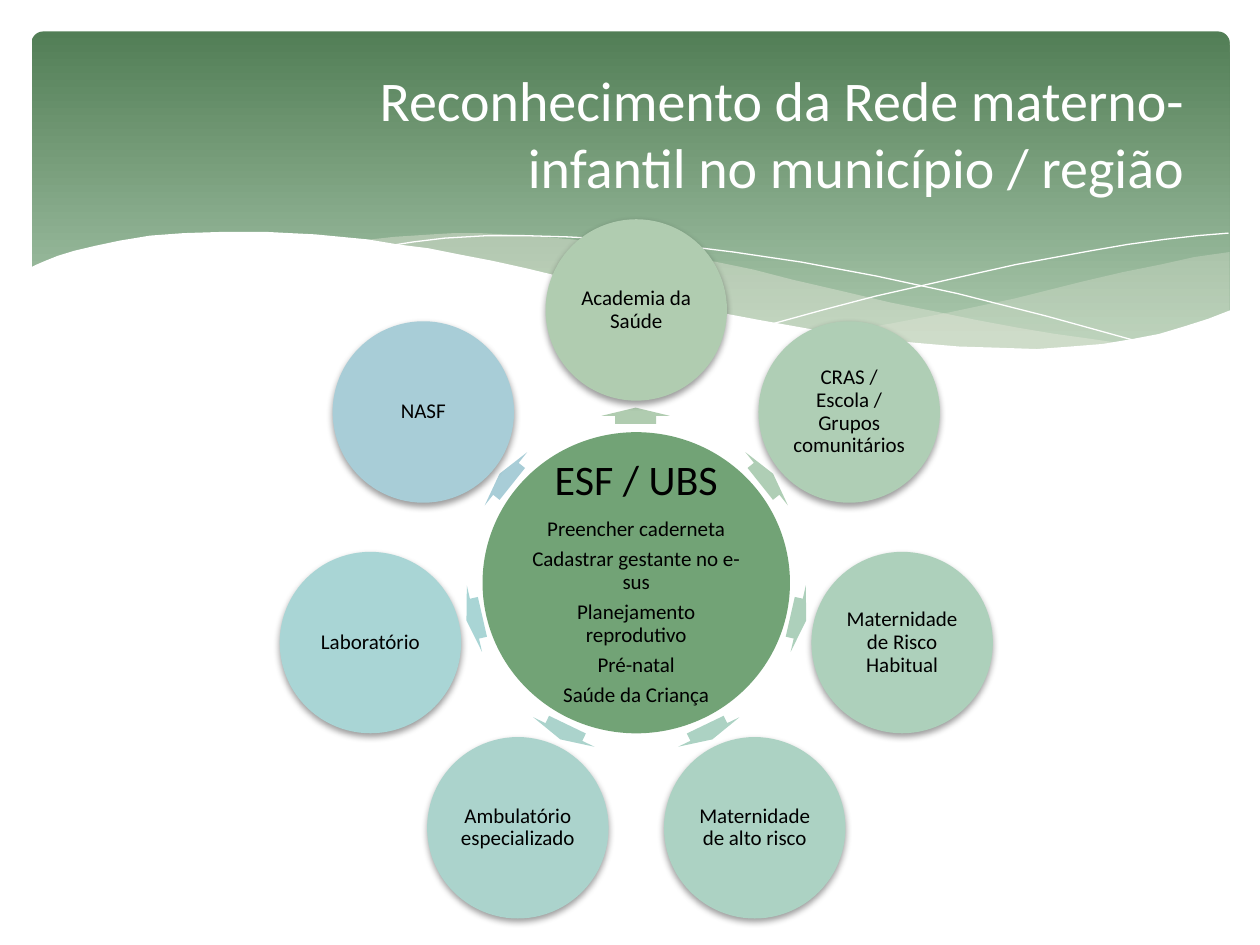
from math import cos, radians, sin

from lxml.etree import SubElement
from pptx import Presentation
from pptx.dml.color import RGBColor
from pptx.enum.shapes import MSO_SHAPE
from pptx.enum.text import MSO_ANCHOR, PP_ALIGN
from pptx.oxml.ns import qn
from pptx.util import Pt

PX = 9144
rgb = RGBColor.from_string


def paint(sp, color, opacity=100):
    sp.shadow.inherit = False
    sp.line.fill.background()
    sp.fill.solid()
    sp.fill.fore_color.rgb = rgb(color)
    if opacity < 100:
        clr = sp._element.spPr.find(qn("a:solidFill"))[0]
        SubElement(clr, qn("a:alpha"), val=str(opacity * 1000))


def write(sp, lines, sizes, inset):
    tf = sp.text_frame
    tf.word_wrap = True
    tf.vertical_anchor = MSO_ANCHOR.MIDDLE
    tf.margin_left = tf.margin_right = tf.margin_top = tf.margin_bottom = inset * PX
    tf.text = "\n".join(lines)
    for p, size in zip(tf.paragraphs, sizes):
        p.alignment = PP_ALIGN.CENTER
        p.line_spacing = 0.9
        p.space_after = Pt(round(size * 0.35, 1))
        for r in p.runs:
            r.font.name = "Calibri"
            r.font.size = Pt(size)
            r.font.color.rgb = rgb("000000")


prs = Presentation()
prs.slide_width, prs.slide_height = 1000 * PX, 750 * PX
s = prs.slides.add_slide(prs.slide_layouts[6])

banner = s.shapes.add_shape(MSO_SHAPE.ROUNDED_RECTANGLE, 25 * PX, 25 * PX, 951 * PX, 270 * PX)
banner.adjustments[0] = 0.034
banner.shadow.inherit = False
banner.line.fill.background()
banner.fill.gradient()
banner.fill.gradient_angle = 270
for stop, color, position in zip(banner.fill.gradient_stops, ("527E56", "AAC8AD"), (0, 0.9)):
    stop.color.rgb = rgb(color)
    stop.position = position

right_wave = [
    (976, 200), (948, 204), (921, 210), (891, 216), (861, 223), (805, 237), (753, 248),
    (706, 257), (661, 265), (691, 269), (719, 272), (745, 275), (769, 277), (792, 277),
    (814, 278), (844, 277), (872, 274), (897, 270), (921, 265), (942, 259), (963, 252),
    (976, 247),
]
middle_wave = [
    (893, 273), (866, 269), (837, 265), (807, 260), (775, 254), (741, 247), (706, 240),
    (668, 231), (629, 222), (598, 214), (569, 208), (541, 203), (514, 198), (489, 194),
    (465, 191), (442, 189), (420, 187), (399, 186), (380, 185), (361, 185), (344, 186),
    (313, 188), (286, 191), (323, 196), (362, 203), (404, 211), (449, 222), (491, 232),
    (530, 240), (566, 248), (601, 255), (634, 261), (665, 266), (695, 270), (722, 274),
    (748, 276), (773, 277), (796, 278), (828, 278), (857, 277), (876, 275),
]
falling_line = [
    (309, 195), (328, 192), (353, 189), (387, 187), (416, 187), (450, 188), (489, 190),
    (533, 194), (582, 200), (636, 208), (695, 219), (760, 233), (831, 251), (907, 272),
]
rising_line = [
    (613, 257), (653, 246), (695, 235), (748, 223), (806, 210), (866, 199), (895, 194),
    (924, 190), (951, 187), (975, 185),
]
white_base = [
    (977, 246), (959, 253), (940, 259), (920, 265), (899, 269), (875, 273), (850, 275),
    (823, 277), (793, 276), (761, 275), (726, 272), (688, 268), (648, 262), (603, 254),
    (555, 245), (503, 233), (447, 220), (418, 213), (391, 207), (365, 202), (340, 197),
    (316, 194), (292, 190), (271, 188), (250, 186), (230, 185), (211, 184), (177, 184),
    (146, 185), (119, 187), (95, 191), (76, 195), (59, 199), (46, 203), (36, 207),
    (29, 210), (23, 213), (23, 329), (977, 329),
]
waves = [
    (right_wave, "EAEBDE", 29),
    (middle_wave, "EAEBDE", 40),
    (falling_line, None, 100),
    (rising_line, None, 100),
    (white_base, "FFFFFF", 100),
]
for points, color, opacity in waves:
    builder = s.shapes.build_freeform(*points[0], scale=PX)
    builder.add_line_segments(points[1:], close=color is not None)
    wave = builder.convert_to_shape()
    if color:
        paint(wave, color, opacity)
    else:
        wave.shadow.inherit = False
        wave.fill.background()
        wave.line.color.rgb = rgb("FFFFFF")
        wave.line.width = Pt(0)

title = s.shapes.add_textbox(224 * PX, 37 * PX, 726 * PX, 137 * PX)
tf = title.text_frame
tf.word_wrap = True
tf.vertical_anchor = MSO_ANCHOR.MIDDLE
tf.text = "Reconhecimento da Rede materno-infantil no município / região"
p = tf.paragraphs[0]
p.alignment = PP_ALIGN.RIGHT
r = p.runs[0]
r.font.name = "Calibri"
r.font.size = Pt(32)
r.font.color.rgb = rgb("FFFFFF")

hub = s.shapes.add_shape(MSO_SHAPE.OVAL, 383 * PX, 343 * PX, 244 * PX, 239 * PX)
paint(hub, "72A376")
hub_lines = [
    "ESF / UBS",
    "Preencher caderneta",
    "Cadastrar gestante no e-sus",
    "Planejamento reprodutivo",
    "Pré-natal",
    "Saúde da Criança",
]
write(hub, hub_lines, [24] + [12] * 5, 3)

services = [
    ("Academia da Saúde", "B0CCB0"),
    ("CRAS / Escola / Grupos comunitários", "AFCEB5"),
    ("Maternidade de Risco Habitual", "ADD0BB"),
    ("Maternidade de alto risco", "ACD2C3"),
    ("Ambulatório especializado", "ABD3CC"),
    ("Laboratório", "A9D5D5"),
    ("NASF", "A8CDD7"),
]
CX, CY = 505, 462
ARROW_ORBIT, CIRCLE_ORBIT = 132, 216
ARROW_W, ARROW_H, CIRCLE = 13, 54, 144
for i, (name, color) in enumerate(services):
    angle = 270 + i * 360 / len(services)
    dx, dy = cos(radians(angle)), sin(radians(angle))

    x = round(CX + ARROW_ORBIT * dx - ARROW_W / 2)
    y = round(CY + ARROW_ORBIT * dy - ARROW_H / 2)
    arrow = s.shapes.add_shape(MSO_SHAPE.RIGHT_ARROW, x * PX, y * PX, ARROW_W * PX, ARROW_H * PX)
    arrow.adjustments[0] = 0.6
    arrow.adjustments[1] = 0.5
    arrow.rotation = angle % 360
    paint(arrow, color)

    x = round(CX + CIRCLE_ORBIT * dx - CIRCLE / 2)
    y = round(CY + CIRCLE_ORBIT * dy - CIRCLE / 2)
    circle = s.shapes.add_shape(MSO_SHAPE.OVAL, x * PX, y * PX, CIRCLE * PX, CIRCLE * PX)
    paint(circle, color)
    write(circle, [name], [12], 2)
    effects = circle._element.spPr.find(qn("a:effectLst"))
    shadow = SubElement(effects, qn("a:outerShdw"), blurRad=str(Pt(4)), dist=str(Pt(2)),
                        dir="5400000", rotWithShape="0")
    shade = SubElement(shadow, qn("a:srgbClr"), val="000000")
    SubElement(shade, qn("a:alpha"), val="38000")

prs.save("out.pptx")
